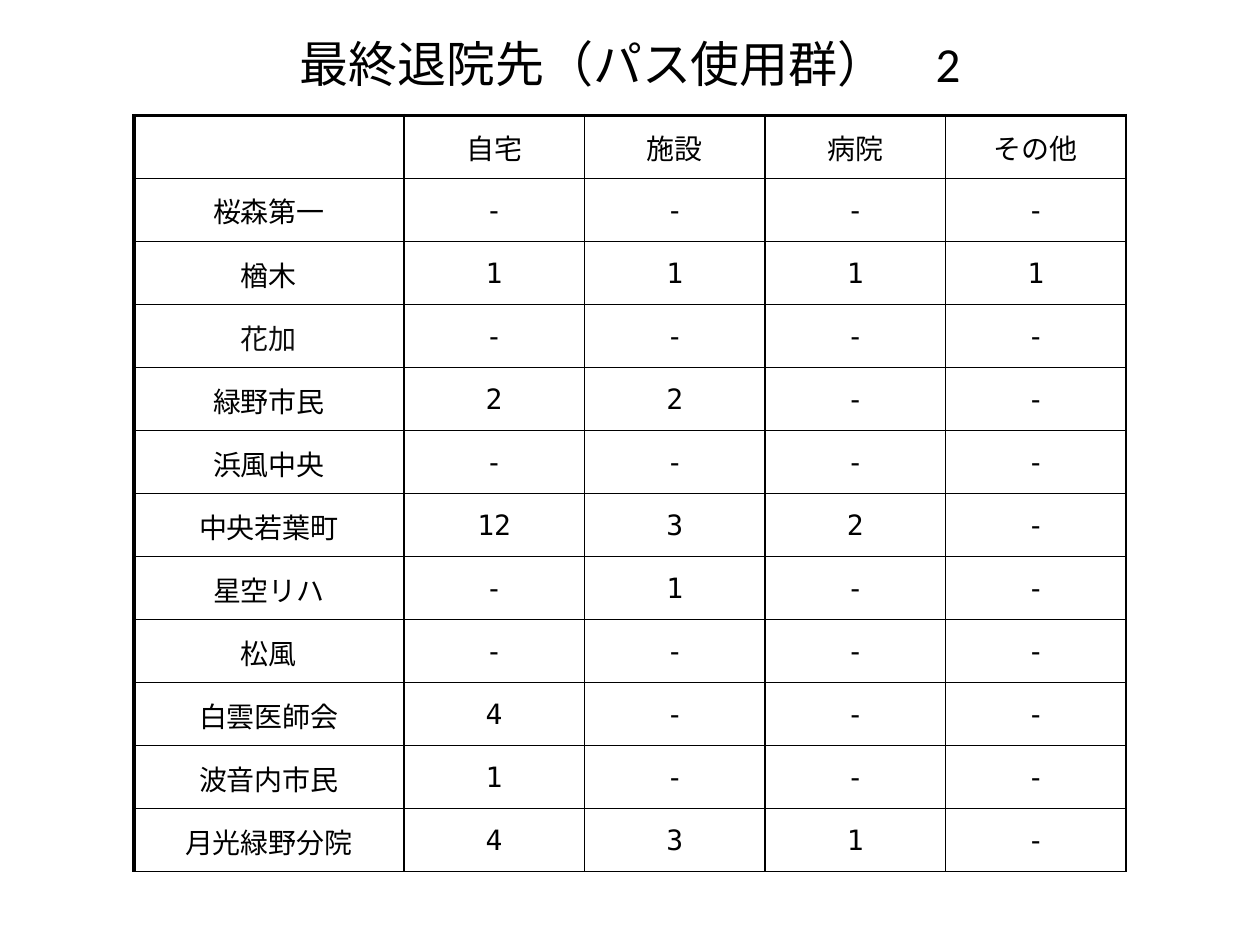
from lxml.etree import SubElement
from pptx import Presentation
from pptx.dml.color import RGBColor
from pptx.enum.lang import MSO_LANGUAGE_ID
from pptx.enum.text import MSO_ANCHOR, MSO_AUTO_SIZE, PP_ALIGN
from pptx.oxml import parse_xml
from pptx.oxml.ns import nsdecls, qn
from pptx.util import Cm, Pt

BLACK = RGBColor(0x00, 0x00, 0x00)
SOFT = RGBColor(0x0D, 0x0D, 0x0D)
THIN, THICK = Pt(1), Pt(2.25)
HEADS = ["", "自宅", "施設", "病院", "その他"]
ROWS = [
    ("桜森第一", "Arial", "----"),
    ("楢木", "Arial", "1111"),
    ("花加", "Arial", "----"),
    ("緑野市民", "Arial", "22--"),
    ("浜風中央", "Arial", "----"),
    ("中央若葉町", "Arial", ["12", "3", "2", "-"]),
    ("星空リハ", "Calibri", "-1--"),
    ("松風", "Calibri", "----"),
    ("白雲医師会", "Calibri", "4---"),
    ("波音内市民", "Calibri", "1---"),
    ("月光緑野分院", "Calibri", "431-"),
]


def write(para, text, name, size, color=BLACK):
    """Write one centred run of text into a paragraph."""
    para.alignment = PP_ALIGN.CENTER
    run = para.add_run()
    run.text = text
    run.font.color.rgb = color
    style = {"name": name, "size": Pt(size), "bold": False,
             "language_id": MSO_LANGUAGE_ID.JAPANESE}
    for key, value in style.items():
        setattr(run.font, key, value)


def edge(cell, widths):
    """Draw the cell's left, right, top and bottom borders."""
    props = cell._tc.get_or_add_tcPr()
    for spot, (side, width) in enumerate(widths.items()):
        line = parse_xml(f'<a:{side} {nsdecls("a")} w="{width}"/>')
        fill = SubElement(line, qn("a:solidFill"))
        SubElement(fill, qn("a:srgbClr"), val=str(BLACK))
        props.insert(spot, line)


def head(slide, left, top, width, height):
    """Place and format the slide title."""
    title = slide.shapes.title
    box = {"left": left, "top": top, "width": width, "height": height}
    for key, value in box.items():
        setattr(title, key, value)
    frame = title.text_frame
    form = {"vertical_anchor": MSO_ANCHOR.TOP, "word_wrap": True,
            "auto_size": MSO_AUTO_SIZE.NONE}
    for key, value in form.items():
        setattr(frame, key, value)
    write(frame.paragraphs[0], "最終退院先（パス使用群）　2", "Calibri", 28)


def fill_cell(cell, row, col):
    """Fill one table cell with its text, spacing and borders."""
    if row == 0:
        text, name = HEADS[col], "Arial"
    else:
        label, face, counts = ROWS[row - 1]
        text, name = (counts[col - 1], "DejaVu Sans Mono") if col else (label, face)
    cell.fill.background()
    cell.vertical_anchor = MSO_ANCHOR.MIDDLE
    para = cell.text_frame.paragraphs[0]
    if row == 0 or (row, col) == (1, 0):
        para.space_before = Pt(3.2)
    else:
        gaps = {"margin_left": Cm(0.03), "margin_right": Cm(0.03),
                "margin_top": Cm(0.03), "margin_bottom": 0}
        for key, value in gaps.items():
            setattr(cell, key, value)
    if text:
        write(para, text, name, 16, SOFT if (row, col) == (3, 0) else BLACK)
    edge(cell, {"lnL": THIN if col else THICK, "lnR": THIN,
                "lnT": THIN if row else THICK, "lnB": THIN})


def grid(slide, left, top, width, height):
    """Build the table of discharge counts per hospital."""
    rows, cols = len(ROWS) + 1, len(HEADS)
    table = slide.shapes.add_table(rows, cols, left, top, width, height).table
    table.first_row = table.horz_banding = False
    first = Cm(5.44)
    for col, column in enumerate(table.columns):
        column.width = (width - first) // (cols - 1) if col else first
    for row, line in enumerate(table.rows):
        line.height = height // rows
        for col, cell in enumerate(line.cells):
            fill_cell(cell, row, col)


def main():
    """Build and save the slide."""
    deck = Presentation()
    deck.slide_width, deck.slide_height = Cm(25.4), Cm(19.05)
    slide = deck.slides.add_slide(deck.slide_layouts[5])
    head(slide, Cm(1.27), Cm(0.55), Cm(22.86), Cm(3.18))
    grid(slide, Cm(2.7), Cm(2.33), Cm(20), Cm(15.24))
    deck.save("out.pptx")


if __name__ == "__main__":
    main()
